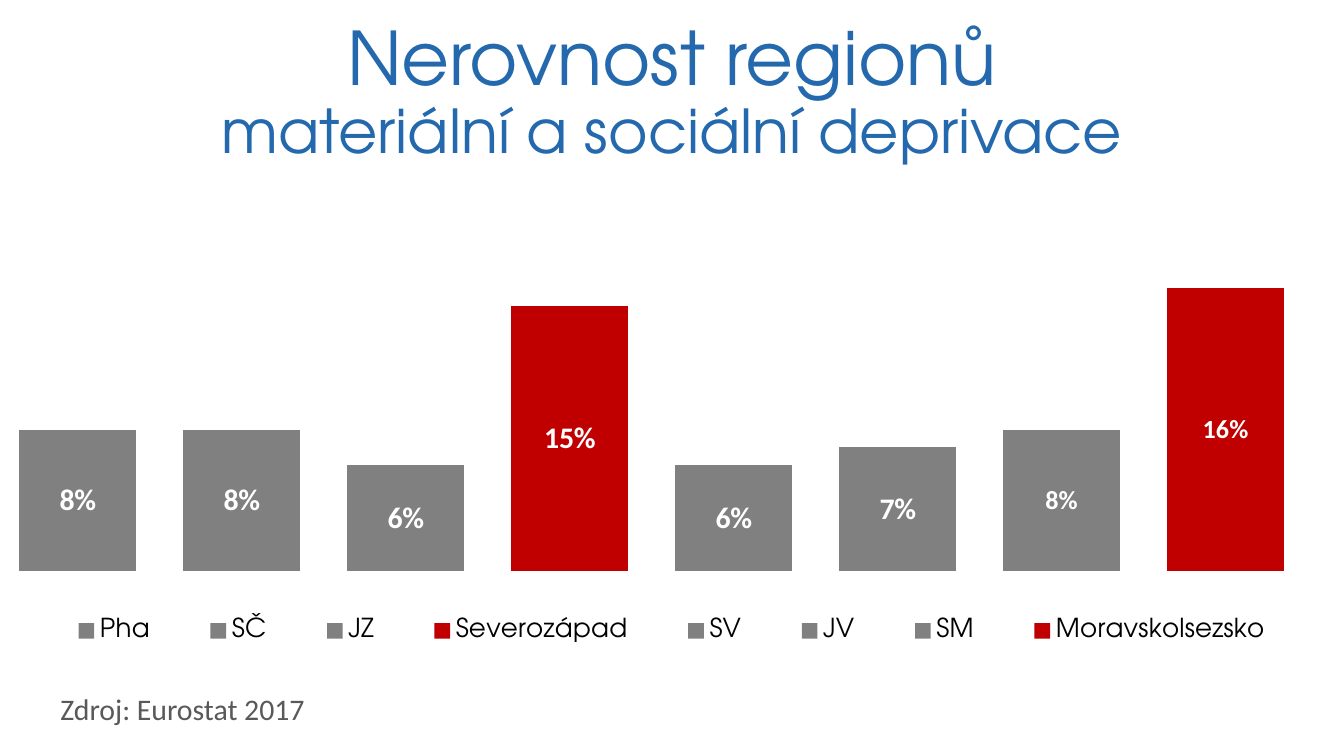
import typing

import lxml.etree
import pptx
import pptx.chart.data
import pptx.dml.color
import pptx.enum.chart
import pptx.enum.text
import pptx.oxml
import pptx.oxml.ns
import pptx.util

Cm = pptx.util.Cm
Pt = pptx.util.Pt
HEAD = "TeX Gyre Adventor"
BODY = "Calibri"
GREY = "808080"
RED = "C00000"


class Bar(typing.NamedTuple):
    name: str
    value: float
    fill: str = GREY
    size: int = 16


class Box(typing.NamedTuple):
    left: float
    top: float
    width: float
    height: float


BARS = [
    Bar("Pha", 0.08),
    Bar("SČ", 0.08),
    Bar("JZ", 0.06),
    Bar("Severozápad", 0.15, RED),
    Bar("SV", 0.06),
    Bar("JV", 0.07),
    Bar("SM", 0.08, size=14),
    Bar("Moravskolsezsko", 0.16, RED, 14),
]


def paint(color, code: str) -> None:
    color.rgb = pptx.dml.color.RGBColor.from_string(code)


def style(font, size: float, name: str, code: str) -> None:
    font.size = Pt(size)
    font.name = name
    paint(font.color, code)


def add_text(slide, box: Box):
    frame = slide.shapes.add_textbox(*map(Cm, box)).text_frame
    frame.word_wrap = True
    return frame


def place(parent, index: int, box: Box, inner: bool = False) -> None:
    for old in parent.findall(pptx.oxml.ns.qn("c:layout")):
        parent.remove(old)
    layout = pptx.oxml.parse_xml(f"<c:layout {pptx.oxml.ns.nsdecls('c')}/>")
    manual = lxml.etree.SubElement(layout, pptx.oxml.ns.qn("c:manualLayout"))
    parts = [("layoutTarget", "inner")] if inner else []
    parts += [("xMode", "edge"), ("yMode", "edge"), *zip("xywh", box)]
    for tag, value in parts:
        lxml.etree.SubElement(manual, pptx.oxml.ns.qn(f"c:{tag}")).set("val", str(value))
    parent.insert(index, layout)


def add_title(slide) -> None:
    frame = add_text(slide, Box(1.27, 0.58, 22.86, 2.39))
    frame.vertical_anchor = pptx.enum.text.MSO_ANCHOR.MIDDLE
    para = frame.paragraphs[0]
    para.alignment = pptx.enum.text.PP_ALIGN.CENTER
    para.line_spacing = 0.9
    first = para.add_run()
    first.text = "Nerovnost regionů"
    style(first.font, 39.6, HEAD, "2469AD")
    para.add_line_break()
    second = para.add_run()
    second.text = "materiální a sociální deprivace"
    style(second.font, 32.4, HEAD, "2469AD")


def add_bars(slide) -> None:
    data = pptx.chart.data.CategoryChartData(number_format="0%")
    data.categories = ["1"]
    for bar in BARS:
        data.add_series(bar.name, [bar.value])
    kind = pptx.enum.chart.XL_CHART_TYPE.COLUMN_CLUSTERED
    box = Box(0, 3.35, 25.4, 10.21)
    chart = slide.shapes.add_chart(kind, *map(Cm, box), data).chart
    chart.has_title = False
    style(chart.font, 10, BODY, "000000")
    chart.category_axis.visible = False
    axis = chart.value_axis
    axis.visible = False
    axis.has_major_gridlines = False
    axis.minimum_scale = 0
    axis.maximum_scale = 0.18

    plot = chart.plots[0]
    plot.vary_by_categories = False
    plot.gap_width = 10
    plot.overlap = -40
    for bar, series in zip(BARS, plot.series):
        series.format.fill.solid()
        paint(series.format.fill.fore_color, bar.fill)
        labels = series.data_labels
        labels.show_value = True
        labels.number_format = "0%"
        labels.number_format_is_linked = False
        labels.position = pptx.enum.chart.XL_LABEL_POSITION.CENTER
        style(labels.font, bar.size, BODY, "FFFFFF")
        labels.font.bold = True

    chart.has_legend = True
    legend = chart.legend
    legend.position = pptx.enum.chart.XL_LEGEND_POSITION.BOTTOM
    legend.include_in_layout = False
    style(legend.font, 14, HEAD, "000000")
    place(legend._element, 1, Box(0.02, 0.79, 0.96, 0.1))
    area = chart._chartSpace.chart.plotArea
    place(area, 0, Box(0.01, 0.14, 0.95, 0.59), True)


def add_note(slide) -> None:
    para = add_text(slide, Box(0.89, 12.93, 8, 0.94)).paragraphs[0]
    para.text = "Zdroj: Eurostat 2017"
    style(para.font, 16, BODY, "595959")


def main() -> None:
    deck = pptx.Presentation()
    deck.slide_width = Cm(25.4)
    deck.slide_height = Cm(14.29)
    slide = deck.slides.add_slide(deck.slide_layouts[6])
    add_title(slide)
    add_bars(slide)
    add_note(slide)
    deck.save("out.pptx")


if __name__ == "__main__":
    main()
